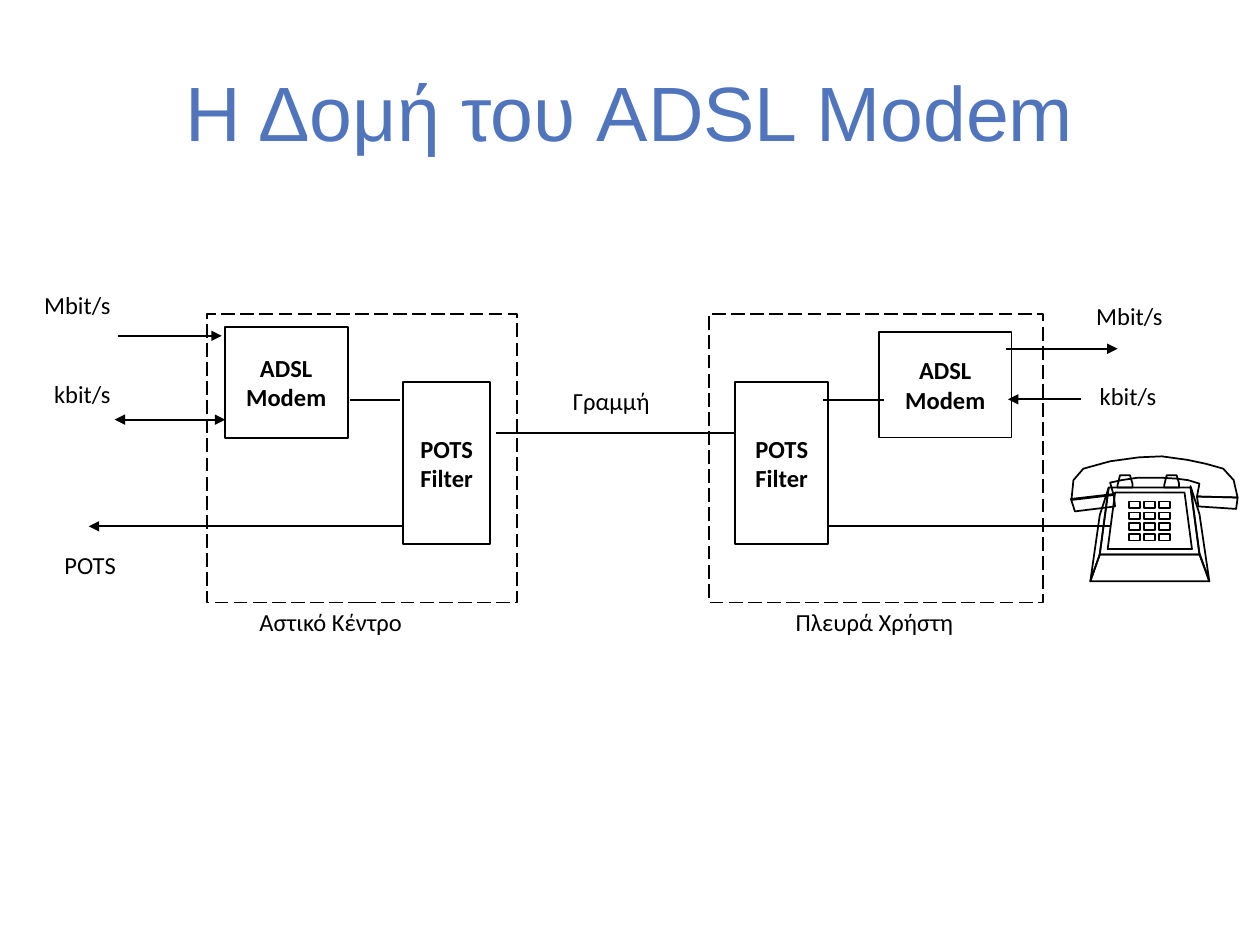
from dataclasses import dataclass
from itertools import product

from lxml.etree import SubElement
from pptx import Presentation
from pptx.dml.color import RGBColor
from pptx.enum.dml import MSO_LINE
from pptx.enum.shapes import MSO_CONNECTOR, MSO_SHAPE
from pptx.enum.text import MSO_ANCHOR, MSO_AUTO_SIZE, PP_ALIGN
from pptx.oxml.ns import qn
from pptx.util import Cm, Pt

COLORS = {"ink": "000000", "title": "5075BC"}


@dataclass
class Box:
    x: float
    y: float
    w: float
    h: float
    text: str = ""
    dashed: bool = False


@dataclass
class Label:
    text: str
    x: float
    y: float
    w: float
    wrap: bool = False


@dataclass
class Wire:
    x1: float
    y: float
    x2: float
    head: bool = False
    tail: bool = False


BOXES = [
    Box(14.3, 6.33, 6.73, 5.82, dashed=True),
    Box(17.72, 6.69, 2.67, 2.13, "ADSL\nModem"),
    Box(14.82, 7.7, 1.88, 3.27, "POTS\nFilter"),
    Box(4.17, 6.33, 6.26, 5.82, dashed=True),
    Box(4.53, 6.59, 2.48, 2.24, "ADSL\nModem"),
    Box(8.13, 7.7, 1.75, 3.27, "POTS\nFilter"),
]

WIRES = [
    Wire(16.68, 10.61, 22.4),
    Wire(10, 8.73, 14.8),
    Wire(17.83, 8.07, 16.59),
    Wire(20.27, 7.03, 22.53, tail=True),
    Wire(21.79, 8.05, 20.32, tail=True),
    Wire(7.06, 8.07, 8.07),
    Wire(8.13, 10.61, 1.79, tail=True),
    Wire(4.54, 8.46, 2.31, head=True, tail=True),
    Wire(2.38, 6.77, 4.47, tail=True),
]

LABELS = [
    Label("Mbit/s", 21.85, 5.94, 2.31, wrap=True),
    Label("kbit/s", 21.92, 7.56, 2.06, wrap=True),
    Label("POTS", 1.05, 10.97, 1.55),
    Label("Mbit/s", 0.64, 5.72, 1.85),
    Label("kbit/s", 0.84, 7.52, 1.68),
    Label("Γραμμή", 11.3, 7.66, 2.08, wrap=True),
    Label("Αστικό Κέντρο", 4.98, 12.12, 3.4),
    Label("Πλευρά Χρήστη", 15.79, 12.12, 3.71),
]

CRADLE = [(22.53, 9.83), (22.53, 9.78), (22.58, 9.58),
          (22.78, 9.58), (22.83, 9.75), (22.83, 9.83)]
PHONE = {
    "left earpiece": [(21.67, 10.31), (21.59, 10.06), (22.45, 9.96), (22.48, 10.21)],
    "handset": [(21.6, 10.08), (21.64, 9.68), (21.84, 9.45), (22.38, 9.3),
                (22.96, 9.22), (23.42, 9.2), (23.93, 9.27), (24.31, 9.35),
                (24.66, 9.45), (24.87, 9.68), (24.95, 10.03), (24.13, 10.01),
                (24.18, 9.75), (23.95, 9.68), (23.72, 9.65), (23.39, 9.63),
                (22.94, 9.63), (22.61, 9.68), (22.38, 9.73), (22.45, 9.98)],
    "right earpiece": [(24.13, 10.01), (24.95, 10.03), (24.92, 10.26), (24.16, 10.21)],
    "body": [(22.17, 11.18), (22.35, 9.83), (24, 9.83), (24.18, 11.18)],
    "front": [(22.17, 11.18), (24.18, 11.18), (24.38, 11.72), (21.98, 11.72)],
    "left side": [(22.17, 11.18), (21.98, 11.72), (22.17, 10.39), (22.35, 9.83)],
    "right side": [(24.18, 11.15), (24.38, 11.72), (24.18, 10.36), (24, 9.8)],
    "left cradle": CRADLE,
    "right cradle": [(x + 0.94, y) for x, y in CRADLE],
    "face": [(22.33, 11.07), (22.48, 9.93), (23.88, 9.93), (24.03, 11.07)],
}
KEYS = [Box(22.76 + 0.3 * col, 10.11 + 0.22 * row, 0.23, 0.13)
        for row, col in product(range(4), range(3))]


def rgb(name: str) -> RGBColor:
    return RGBColor.from_string(COLORS[name])


def outline(sp) -> None:
    sp.line.color.rgb = rgb("ink")
    sp.line.width = Pt(1)


def style_shape(sp) -> None:
    sp.shadow.inherit = False
    sp.fill.background()
    outline(sp)


def write(tf, text: str, align: PP_ALIGN, bold: bool = False) -> None:
    tf.text = text
    for p in tf.paragraphs:
        p.alignment = align
        p.font.name = "Calibri"
        p.font.size = Pt(14)
        p.font.bold = bold
        p.font.color.rgb = rgb("ink")


def add_box(shapes, box: Box) -> None:
    sp = shapes.add_shape(MSO_SHAPE.RECTANGLE, Cm(box.x), Cm(box.y), Cm(box.w), Cm(box.h))
    style_shape(sp)
    if box.dashed:
        sp.line.dash_style = MSO_LINE.LONG_DASH
    if box.text:
        tf = sp.text_frame
        tf.word_wrap = False
        tf.vertical_anchor = MSO_ANCHOR.MIDDLE
        write(tf, box.text, PP_ALIGN.CENTER, bold=True)


def add_label(shapes, label: Label) -> None:
    tf = shapes.add_textbox(Cm(label.x), Cm(label.y), Cm(label.w), Cm(0.84)).text_frame
    tf.word_wrap = label.wrap
    tf.auto_size = MSO_AUTO_SIZE.SHAPE_TO_FIT_TEXT
    write(tf, label.text, PP_ALIGN.LEFT)


def add_wire(shapes, wire: Wire) -> None:
    cxn = shapes.add_connector(MSO_CONNECTOR.STRAIGHT, Cm(wire.x1), Cm(wire.y),
                               Cm(wire.x2), Cm(wire.y))
    outline(cxn)
    ln = cxn.line._get_or_add_ln()
    for tag, shown in (("a:headEnd", wire.head), ("a:tailEnd", wire.tail)):
        if shown:
            SubElement(ln, qn(tag), type="triangle")
    SubElement(cxn._element.spPr, qn("a:effectLst"))


def add_outline(shapes, points: list[tuple[float, float]]) -> None:
    start, *rest = [(Cm(x), Cm(y)) for x, y in points]
    builder = shapes.build_freeform(*start)
    builder.add_line_segments(rest, close=True)
    style_shape(builder.convert_to_shape())


def add_title(slide, text: str) -> None:
    sp = slide.shapes.title
    sp.left, sp.top, sp.width, sp.height = Cm(1.27), Cm(0.76), Cm(22.86), Cm(3.18)
    tf = sp.text_frame
    tf.text = text
    tf.vertical_anchor = MSO_ANCHOR.MIDDLE
    p = tf.paragraphs[0]
    p.alignment = PP_ALIGN.CENTER
    p.line_spacing = 0.9
    p.font.name = "Arial"
    p.font.size = Pt(44)
    p.font.color.rgb = rgb("title")


def main() -> None:
    prs = Presentation()
    prs.slide_width, prs.slide_height = Cm(25.4), Cm(19.05)
    s = prs.slides.add_slide(prs.slide_layouts[5])
    add_title(s, "Η Δομή του ADSL Modem")
    for box in BOXES:
        add_box(s.shapes, box)
    for wire in WIRES:
        add_wire(s.shapes, wire)
    for points in PHONE.values():
        add_outline(s.shapes, points)
    for key in KEYS:
        add_box(s.shapes, key)
    for label in LABELS:
        add_label(s.shapes, label)
    prs.save("out.pptx")


if __name__ == "__main__":
    main()
